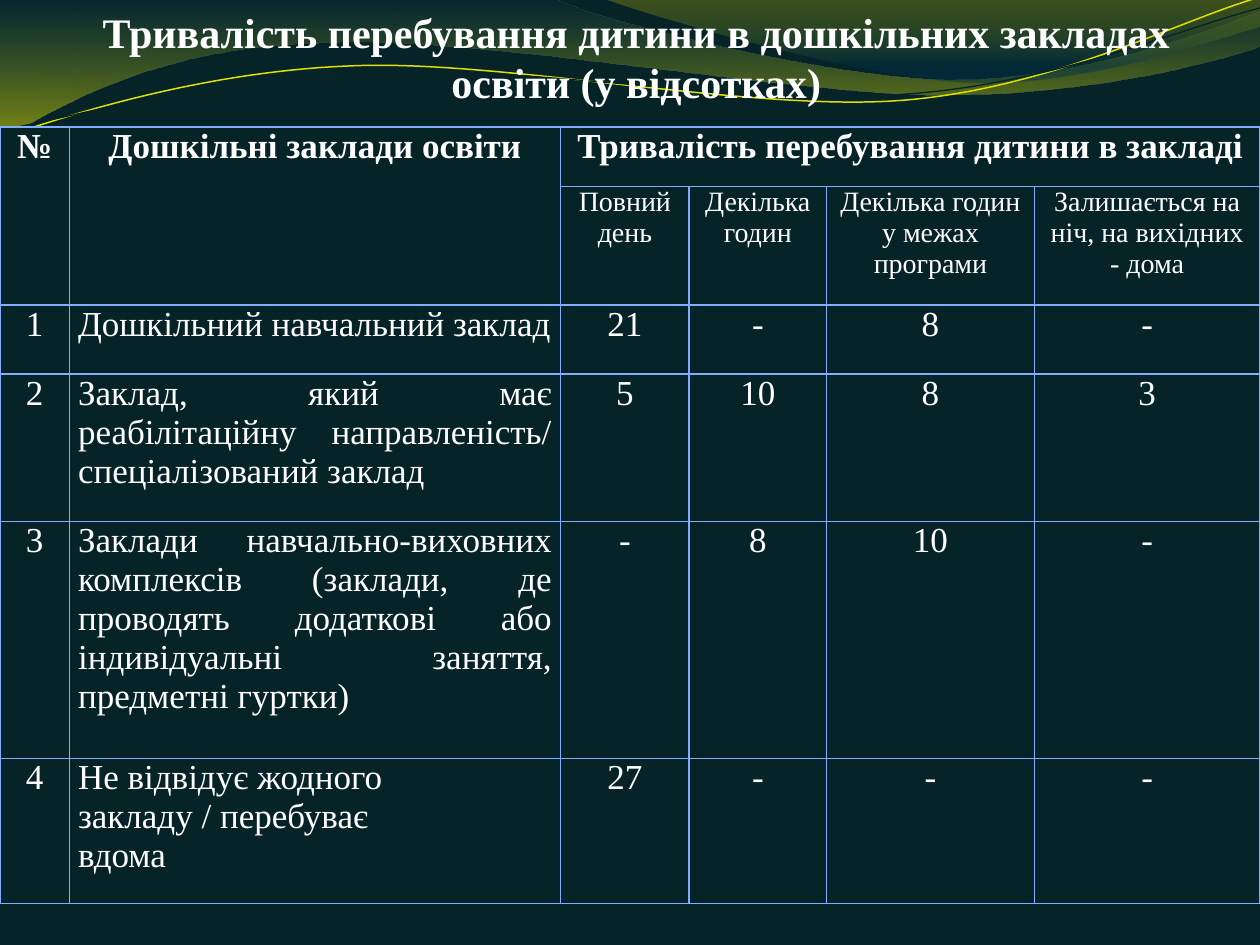
from lxml.etree import SubElement
from pptx import Presentation
from pptx.dml.color import RGBColor
from pptx.enum.text import MSO_ANCHOR as Anchor, MSO_AUTO_SIZE as AutoSize, PP_ALIGN as Align
from pptx.oxml import parse_xml
from pptx.oxml.ns import nsdecls, qn
from pptx.util import Inches, Pt

DARK, WHITE, BORDER = "062328", "FFFFFF", "82ACFF"


def paint(fill, color):
    fill.solid()
    fill.fore_color.rgb = RGBColor.from_string(color)


def write(frame, text, size=20, bold=False, align=Align.CENTER, color=WHITE):
    frame.word_wrap = True
    for index, line in enumerate(text.split("\n")):
        para = frame.paragraphs[0] if index == 0 else frame.add_paragraph()
        para.alignment = align
        span = para.add_run()
        span.text = line
        span.font.name = "Times New Roman"
        span.font.size = Pt(size)
        span.font.bold = bold
        paint(span.font.fill, color)


deck = Presentation()
deck.slide_width, deck.slide_height = Inches(10), Inches(7.5)
page = deck.slides.add_slide(deck.slide_layouts[5])
paint(page.background.fill, DARK)

bands = [
    ([(0, 0), (4.4, -0.01), (4.76, 0.17, 6.64, 0.63, 7.58, 0.63),
      (8.53, 0.63, 9.58, 0.26, 10, 0.09), (10.01, 0.36),
      (9.83, 0.44, 8.7, 0.76, 7.46, 0.75), (6.22, 0.75, 3.82, 0.28, 2.57, 0.34),
      (1.29, 0.36, 0.46, 0.83, -0.01, 1.13)],
     [(0, "002B3C", 45), (1, "E7E700", 55)]),
    ([(4.79, -0.01), (5.09, 0.11, 6.82, 0.62, 7.69, 0.65),
      (8.56, 0.69, 9.61, 0.32, 10, 0.21), (10, 0)],
     [(0, "BDBD00", 30), (0.8, "003347", 45)]),
]
strands = [
    ([(-0.04, 0.87), (0.47, 0.72, 1.58, 0.41, 2.78, 0.42),
      (3.96, 0.42, 5.91, 0.93, 7.12, 0.9), (8.32, 0.87, 9.4, 0.36, 10, 0.22)],
     ("E1E100", 0.85)),
    ([(-0.04, 0.8), (0.46, 0.75, 1.64, 0.45, 2.83, 0.46),
      (4.03, 0.46, 5.96, 0.89, 7.16, 0.85), (8.35, 0.83, 9.42, 0.42, 10.02, 0.3)],
     (DARK, 0.75)),
]
for outline, style in bands + strands:
    closed = isinstance(style, list)
    corners = [(Inches(segment[-2]), Inches(segment[-1])) for segment in outline]
    builder = page.shapes.build_freeform(*corners[0])
    builder.add_line_segments(corners[1:], close=closed)
    wave = builder.convert_to_shape()
    wave.shadow.inherit = False
    edges = list(wave._element.spPr.iter(qn("a:lnTo")))
    for edge, segment in zip(edges, outline[1:]):
        if len(segment) == 6:
            edge.tag = qn("a:cubicBezTo")
            edge.remove(edge[0])
            for x, y in zip(segment[::2], segment[1::2]):
                point = SubElement(edge, qn("a:pt"))
                point.set("x", str(Inches(x) - wave.left))
                point.set("y", str(Inches(y) - wave.top))
    if closed:
        wave.line.fill.background()
        wave.fill.gradient()
        wave.fill.gradient_angle = 270
        for stop, (position, color, opacity) in zip(wave.fill.gradient_stops, style):
            stop.position = position
            stop.color.rgb = RGBColor.from_string(color)
        tints = wave._element.spPr.find(qn("a:gradFill")).iter(qn("a:srgbClr"))
        for tint, (position, color, opacity) in zip(tints, style):
            SubElement(tint, qn("a:alpha")).set("val", str(opacity * 1000))
    else:
        wave.rotation = -2.7
        wave.fill.background()
        paint(wave.line.fill, style[0])
        wave.line.width = Pt(style[1])

title = page.shapes.title
page.shapes._spTree.append(title._element)
title.left, title.top, title.width, title.height = Inches(0.55), 0, Inches(9), Inches(0.85)
frame = title.text_frame
frame.auto_size = AutoSize.NONE
frame.vertical_anchor = Anchor.BOTTOM
frame.margin_left = frame.margin_right = frame.margin_bottom = 0
frame.margin_top = Inches(0.05)
write(frame, "Тривалість перебування дитини в дошкільних закладах освіти (у відсотках)",
      size=24, bold=True)

rows = [
    ["№", "Дошкільні заклади освіти", "Тривалість перебування дитини в закладі", "", "", ""],
    ["", "", "Повний\nдень", "Декілька\nгодин", "Декілька годин у межах програми",
     "Залишається на ніч, на вихідних - дома"],
    ["1", "Дошкільний навчальний заклад", "21", "-", "8", "-"],
    ["2", "Заклад, який має реабілітаційну направленість/ спеціалізований заклад",
     "5", "10", "8", "3"],
    ["3", "Заклади навчально-виховних комплексів (заклади, де проводять додаткові або "
     "індивідуальні заняття, предметні гуртки) ", "-", "8", "10", "-"],
    ["4", "Не відвідує жодного \nзакладу / перебуває \nвдома", "27", "-", "-", "-"],
]
widths = [0.55, 3.9, 1.02, 1.09, 1.65, 1.79]
heights = [0.47, 0.94, 0.55, 1.17, 1.88, 1.15]
table = page.shapes.add_table(len(rows), len(widths), 0, Inches(1.01),
                              Inches(10), Inches(sum(heights))).table
for column, width in zip(table.columns, widths):
    column.width = Inches(width)
for row, height in zip(table.rows, heights):
    row.height = Inches(height)

for r, texts in enumerate(rows):
    for c, text in enumerate(texts):
        cell = table.cell(r, c)
        cell.margin_left = cell.margin_right = Inches(0.07)
        cell.margin_top = cell.margin_bottom = 0
        paint(cell.fill, DARK)
        for index, side in enumerate("LRTB"):
            cell._tc.get_or_add_tcPr().insert(index, parse_xml(
                f'<a:ln{side} {nsdecls("a")} w="12700"><a:solidFill>'
                f'<a:srgbClr val="{BORDER}"/></a:solidFill></a:ln{side}>'))
        if text:
            write(cell.text_frame, text, size=16 if r == 1 else 20, bold=r == 0,
                  align=Align.CENTER if r < 2 or c != 1
                  else Align.LEFT if r == 2 else Align.JUSTIFY)
table.cell(0, 0).merge(table.cell(1, 0))
table.cell(0, 1).merge(table.cell(1, 1))
table.cell(0, 2).merge(table.cell(0, 5))

deck.save("out.pptx")
